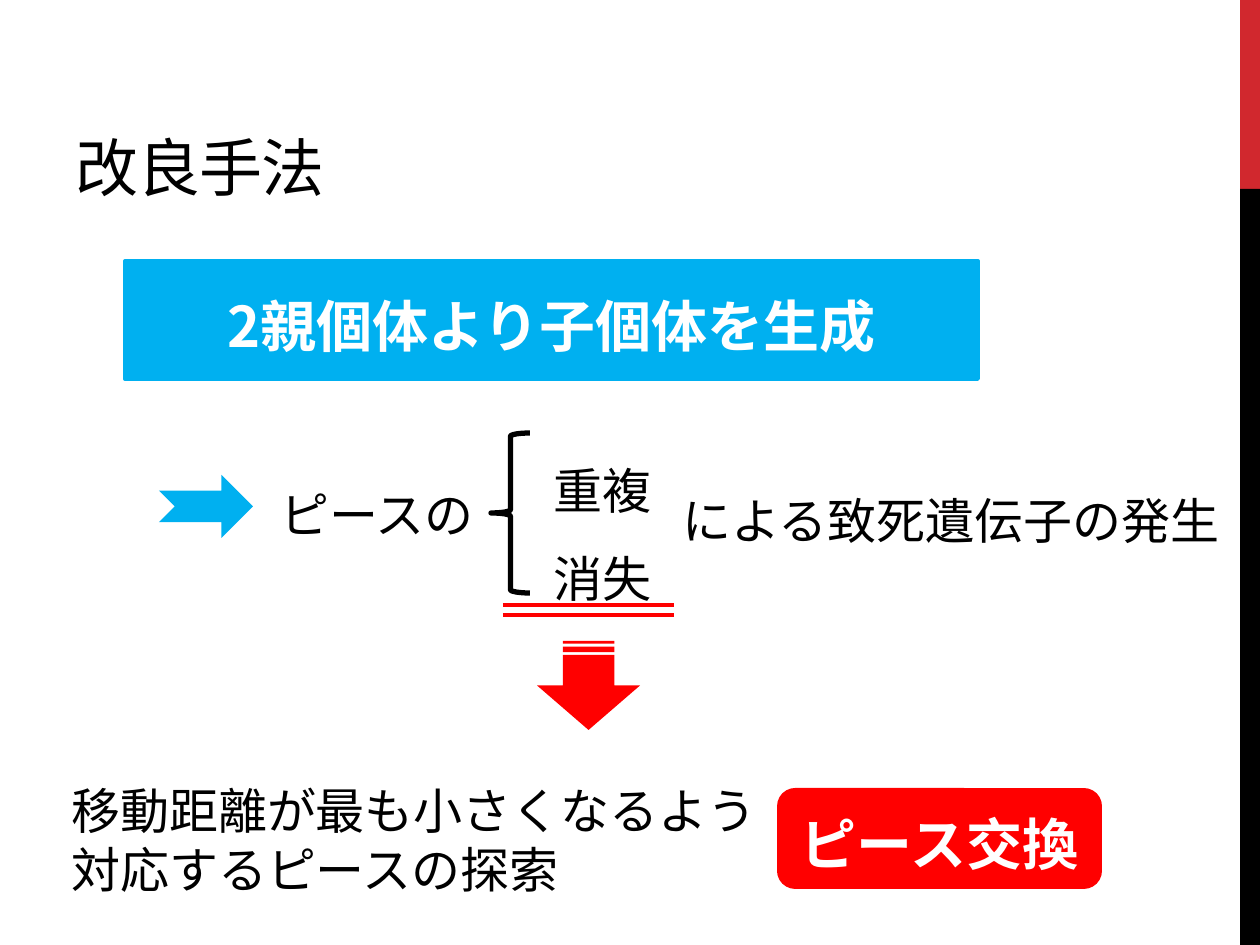
from lxml.etree import SubElement
from pptx import Presentation
from pptx.dml.color import RGBColor
from pptx.enum.shapes import MSO_CONNECTOR, MSO_SHAPE
from pptx.enum.text import MSO_ANCHOR, MSO_AUTO_SIZE, PP_ALIGN
from pptx.oxml.ns import qn
from pptx.util import Emu, Pt

SCALE = 914400 / 126
FONT = "Noto Sans CJK JP"
BLACK, WHITE, RED, BLUE, ACCENT = "000000", "FFFFFF", "FF0000", "00B0F0", "D1282E"


def px(*values):
    return [Emu(round(v * SCALE)) for v in values]


def rgb(value):
    return RGBColor.from_string(value)


def apply(target, values):
    for name, value in values.items():
        setattr(target, name, value)


class SlideBuilder:
    """Draw styled elements on one slide, measured in px."""

    def __init__(self, slide, font):
        self.slide = slide
        self.font = font

    def add_lines(self, tf, lines, size=28, color=BLACK, bold=False, spacing=None, **para):
        for i, line in enumerate(lines):
            p = tf.paragraphs[0] if i == 0 else tf.add_paragraph()
            apply(p, para)
            r = p.add_run()
            r.text = line
            apply(r.font, {"name": self.font, "size": Pt(size), "bold": bold})
            r.font.color.rgb = rgb(color)
            rPr = r._r.get_or_add_rPr()
            SubElement(rPr, qn("a:ea")).set("typeface", self.font)
            if spacing is not None:
                rPr.set("spc", str(spacing))

    def text(self, box, lines, frame=None, **style):
        tf = self.slide.shapes.add_textbox(*px(*box)).text_frame
        apply(tf, frame or {"word_wrap": False, "auto_size": MSO_AUTO_SIZE.SHAPE_TO_FIT_TEXT})
        self.add_lines(tf, lines, **style)

    def shape(self, kind, box, fill=None, line=None, width=2.25, rotation=0):
        sp = self.slide.shapes.add_shape(kind, *px(*box))
        sp.shadow.inherit = False
        sp.rotation = rotation
        if fill:
            sp.fill.solid()
            sp.fill.fore_color.rgb = rgb(fill)
        else:
            sp.fill.background()
        if line:
            sp.line.color.rgb = rgb(line)
            sp.line.width = Pt(width)
        else:
            sp.line.fill.background()
        return sp

    def label(self, kind, box, color, line):
        tf = self.shape(kind, box, color, color).text_frame
        left, bottom = px(15, 5)
        apply(tf, {"word_wrap": True, "vertical_anchor": MSO_ANCHOR.MIDDLE,
                   "margin_left": left, "margin_right": left,
                   "margin_top": left, "margin_bottom": bottom})
        self.add_lines(tf, [line], size=32, color=WHITE, bold=True, alignment=PP_ALIGN.CENTER)

    def line(self, start, end, color, width=2.25):
        c = self.slide.shapes.add_connector(MSO_CONNECTOR.STRAIGHT, *px(*start, *end))
        c.line.color.rgb = rgb(color)
        c.line.width = Pt(width)
        SubElement(c._element.spPr, qn("a:effectLst"))


def main():
    prs = Presentation()
    prs.slide_width, prs.slide_height = px(1260, 945)
    s = SlideBuilder(prs.slides.add_slide(prs.slide_layouts[6]), FONT)

    s.shape(MSO_SHAPE.RECTANGLE, (1240, 0, 20, 189), ACCENT)
    s.shape(MSO_SHAPE.RECTANGLE, (1240, 189, 20, 756), BLACK)
    s.text((63, 21, 798, 189), ["改良手法"], size=36, spacing=-60,
           frame={"word_wrap": True, "vertical_anchor": MSO_ANCHOR.BOTTOM})

    s.shape(MSO_SHAPE.LEFT_BRACE, (491, 433, 39, 160), line=BLACK, width=3)
    s.text((268, 478, 223, 72), ["ピースの"])
    s.text((541, 425, 125, 190), ["重複", "消失"], line_spacing=1.5)
    s.text((670, 484, 570, 72), ["による致死遺伝子の発生"])
    for y in (605, 615):
        s.line((503, y), (674, y), RED)

    s.label(MSO_SHAPE.ROUNDED_RECTANGLE, (779, 790, 321, 97), RED, "ピース交換")
    s.label(MSO_SHAPE.RECTANGLE, (125, 261, 853, 118), BLUE, "2親個体より子個体を生成")
    s.shape(MSO_SHAPE.NOTCHED_RIGHT_ARROW, (159, 475, 94, 63), BLUE)
    s.shape(MSO_SHAPE.STRIPED_RIGHT_ARROW, (544, 634, 89, 103), RED, rotation=90)
    s.text((59, 774, 718, 131), ["移動距離が最も小さくなるよう", "対応するピースの探索"])

    prs.save("out.pptx")


if __name__ == "__main__":
    main()
